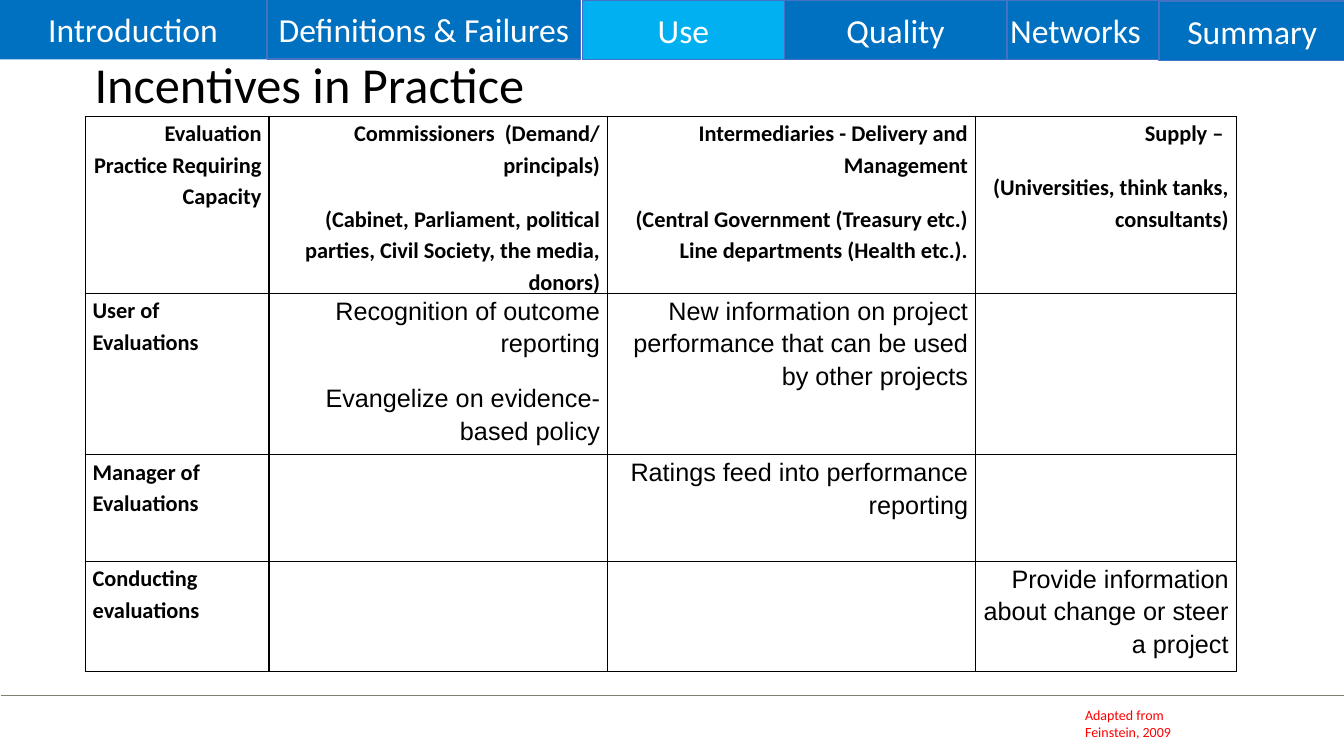
from dataclasses import dataclass

from lxml import etree
from pptx import Presentation
from pptx.dml.color import RGBColor
from pptx.enum import shapes, text
from pptx.oxml.ns import qn
from pptx.util import Pt


@dataclass(frozen=True)
class Theme:
    tab: str = "0070C0"
    current_tab: str = "00B0F0"
    tab_edge: str = "4472C4"
    rule: str = "7C8070"
    white: str = "FFFFFF"
    black: str = "000000"
    red: str = "FF0000"
    heading_font: str = "Calibri"
    body_font: str = "Arial"
    title_size: int = 36
    tab_size: int = 24
    body_size: int = 18
    label_size: int = 16
    source_size: int = 10


THEME = Theme()
RIGHT, LEFT = text.PP_ALIGN.RIGHT, text.PP_ALIGN.LEFT

TABS = [
    ("Introduction", 0, -1.5, 190, 44),
    ("Networks", 708.5, 0, 119.5, 42.5),
    ("Quality", 560.2, 0, 159, 42.5),
    ("Summary", 828, 0.7, 133, 42.5),
    ("Use", 416.2, 0, 144, 42.5),
    ("Definitions & Failures", 190.8, -0.7, 224, 43),
]

COLUMN_WIDTHS = [131.4, 241.8, 262.9, 186.1]
ROW_HEIGHTS = [126.2, 115.2, 76.2, 78.5]
INCENTIVES = [
    [
        ["Evaluation Practice Requiring Capacity"],
        ["Commissioners  (Demand/ principals)",
         "(Cabinet, Parliament, political parties, Civil Society, the media, donors)"],
        ["Intermediaries - Delivery and Management",
         "(Central Government (Treasury etc.) Line departments (Health etc.)."],
        ["Supply – ", "(Universities, think tanks, consultants)"],
    ],
    [
        ["User of Evaluations"],
        ["Recognition of outcome reporting", "Evangelize on evidence-based policy"],
        ["New information on project performance that can be used by other projects"],
        [],
    ],
    [["Manager of Evaluations"], [], ["Ratings feed into performance reporting"], []],
    [["Conducting evaluations"], [], [],
     ["Provide information about change or steer a project"]],
]


def rgb(value):
    return RGBColor.from_string(value)


def style(paragraph, size, color, font=THEME.heading_font, bold=False):
    for run in paragraph.runs:
        run.font.size = Pt(size)
        run.font.name = font
        run.font.bold = bold
        run.font.color.rgb = rgb(color)


def add_tab(slide, label, left, top, width, height):
    tab = slide.shapes.add_shape(
        shapes.MSO_SHAPE.RECTANGLE, Pt(left), Pt(top), Pt(width), Pt(height))
    tab.shadow.inherit = False
    tab.fill.solid()
    tab.fill.fore_color.rgb = rgb(THEME.current_tab if label == "Use" else THEME.tab)
    if label == "Introduction":
        tab.line.fill.background()
    else:
        tab.line.color.rgb = rgb(THEME.tab_edge)
        tab.line.width = Pt(1)
    frame = tab.text_frame
    frame.margin_left = frame.margin_right = Pt(3.6)
    frame.margin_top = frame.margin_bottom = Pt(3.6)
    frame.vertical_anchor = text.MSO_ANCHOR.MIDDLE
    frame.word_wrap = True
    frame.text = label
    frame.paragraphs[0].alignment = text.PP_ALIGN.CENTER
    style(frame.paragraphs[0], THEME.tab_size, THEME.white)


def add_text(slide, wording, left, top, width, height, size, color, spacing=1.0):
    frame = slide.shapes.add_textbox(Pt(left), Pt(top), Pt(width), Pt(height)).text_frame
    frame.word_wrap = True
    frame.text = wording
    frame.paragraphs[0].line_spacing = spacing
    style(frame.paragraphs[0], size, color)


def add_footer_rule(slide):
    rule = slide.shapes.add_connector(
        shapes.MSO_CONNECTOR.STRAIGHT, Pt(0.7), Pt(496.8), Pt(960), Pt(496.8))
    rule.line.color.rgb = rgb(THEME.rule)
    rule.line.width = Pt(1)
    etree.SubElement(rule._element.spPr, qn("a:effectLst"))


def add_borders(cell):
    properties = cell._tc.get_or_add_tcPr()
    for position, side in enumerate(("lnL", "lnR", "lnT", "lnB")):
        border = etree.Element(qn(f"a:{side}"), w=str(Pt(1)))
        fill = etree.SubElement(border, qn("a:solidFill"))
        etree.SubElement(fill, qn("a:srgbClr"), val=THEME.black)
        properties.insert(position, border)


def fill_cell(cell, wording, is_label, alignment):
    cell.fill.background()
    add_borders(cell)
    cell.margin_left = cell.margin_right = Pt(5.4)
    cell.margin_top = cell.margin_bottom = Pt(0)
    if not wording:
        return
    cell.text_frame.text = "\n".join(wording)
    for order, paragraph in enumerate(cell.text_frame.paragraphs):
        paragraph.alignment = alignment
        paragraph.line_spacing = 1.15
        paragraph.space_before = Pt(6 if order else 0)
        paragraph.space_after = Pt(10 if order < len(wording) - 1 else 0)
        if is_label:
            style(paragraph, THEME.label_size, THEME.black, bold=True)
        else:
            style(paragraph, THEME.body_size, THEME.black, THEME.body_font)


def add_incentives_table(slide):
    table = slide.shapes.add_table(
        len(ROW_HEIGHTS), len(COLUMN_WIDTHS), Pt(60.8), Pt(83.2),
        Pt(sum(COLUMN_WIDTHS)), Pt(sum(ROW_HEIGHTS))).table
    table.first_row = table.horz_banding = False
    for column, width in zip(table.columns, COLUMN_WIDTHS):
        column.width = Pt(width)
    for row, height in zip(table.rows, ROW_HEIGHTS):
        row.height = Pt(height)
    for r, entries in enumerate(INCENTIVES):
        for c, wording in enumerate(entries):
            alignment = LEFT if r and not c else RIGHT
            fill_cell(table.cell(r, c), wording, r == 0 or c == 0, alignment)


def main():
    deck = Presentation()
    deck.slide_width, deck.slide_height = Pt(960), Pt(540)
    slide = deck.slides.add_slide(deck.slide_layouts[6])
    add_footer_rule(slide)
    for tab in TABS:
        add_tab(slide, *tab)
    add_text(slide, "Incentives in Practice", 60.5, 39, 648, 57,
             THEME.title_size, THEME.black, 0.9)
    add_text(slide, "Adapted from  Feinstein, 2009", 768, 501, 85, 32,
             THEME.source_size, THEME.red)
    add_incentives_table(slide)
    deck.save("out.pptx")


if __name__ == "__main__":
    main()
